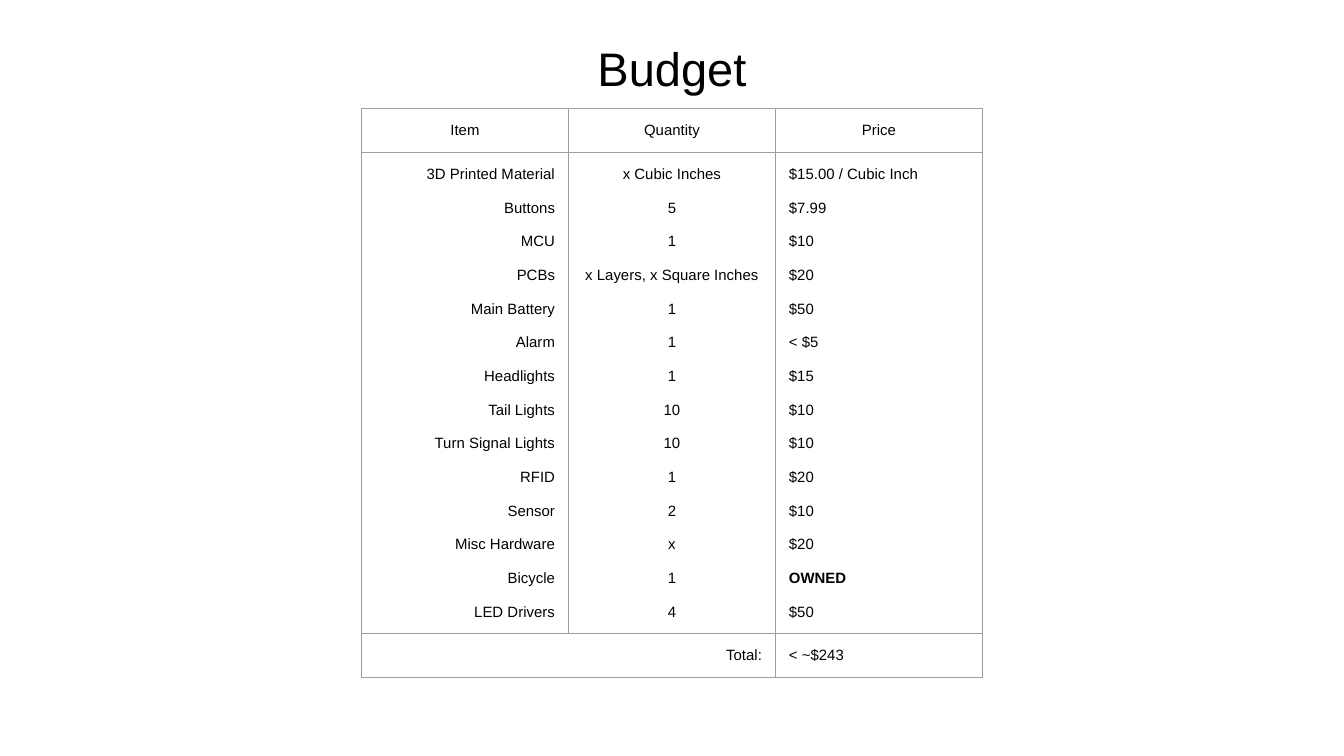
from lxml import etree
from pptx import Presentation
from pptx.dml.color import RGBColor
from pptx.enum.text import MSO_ANCHOR, PP_ALIGN
from pptx.oxml.ns import qn
from pptx.util import Inches, Pt

LEFT, CENTER, RIGHT = PP_ALIGN.LEFT, PP_ALIGN.CENTER, PP_ALIGN.RIGHT
TOP, MIDDLE = MSO_ANCHOR.TOP, MSO_ANCHOR.MIDDLE

BLACK = RGBColor(0x00, 0x00, 0x00)
GRAY = RGBColor(0x9E, 0x9E, 0x9E)

TITLE_ONLY = 5
SLIDE_WIDTH = Inches(10)
SLIDE_HEIGHT = SLIDE_WIDTH * 9 // 16
TABLE_LEFT, TABLE_TOP = 2.69, 0.81
COLUMN_WIDTH = 1.54
ROW_HEIGHTS = [0.32, 3.58, 0.32]

HEADINGS = ["Item", "Quantity", "Price"]
ALIGNMENTS = [RIGHT, CENTER, LEFT]
BUDGET = [
    ("3D Printed Material", "x Cubic Inches", "$15.00 / Cubic Inch"),
    ("Buttons", "5", "$7.99"),
    ("MCU", "1", "$10"),
    ("PCBs", "x Layers, x Square Inches", "$20"),
    ("Main Battery", "1", "$50"),
    ("Alarm", "1", "< $5"),
    ("Headlights", "1", "$15"),
    ("Tail Lights", "10", "$10"),
    ("Turn Signal Lights", "10", "$10"),
    ("RFID", "1", "$20"),
    ("Sensor", "2", "$10"),
    ("Misc Hardware", "x", "$20"),
    ("Bicycle", "1", "OWNED"),
    ("LED Drivers", "4", "$50"),
]
BOLD_TEXT = "OWNED"


def set_values(target, values):
    for name, value in values.items():
        setattr(target, name, value)


class BudgetSlide:
    title_font = {"name": "Arial", "size": Pt(25.2), "bold": False}
    cell_font = {"name": "Arial", "size": Pt(8)}
    margins = {f"margin_{side}": Inches(0.1)
               for side in ("left", "right", "top", "bottom")}
    line_gap = Pt(9)

    def __init__(self, deck):
        self.slide = deck.slides.add_slide(deck.slide_layouts[TITLE_ONLY])

    def title(self, text, left, top, width, height):
        box = self.slide.shapes.title
        set_values(box, {"left": Inches(left), "top": Inches(top),
                         "width": Inches(width), "height": Inches(height)})
        frame = box.text_frame
        set_values(frame, {**self.margins, "vertical_anchor": MIDDLE,
                           "word_wrap": True})
        para = frame.paragraphs[0]
        para.alignment = CENTER
        span = para.add_run()
        span.text = text
        set_values(span.font, self.title_font)
        span.font.color.rgb = BLACK

    def table(self, left, top, column_width, row_heights, columns):
        frame = self.slide.shapes.add_table(
            len(row_heights), columns, Inches(left), Inches(top),
            Inches(column_width * columns), Inches(sum(row_heights)))
        table = frame.table
        set_values(table, {"first_row": False, "horz_banding": False})
        for column in table.columns:
            column.width = Inches(column_width)
        for row, height in zip(table.rows, row_heights):
            row.height = Inches(height)
        for cell in table.iter_cells():
            self.borders(cell)
            cell.fill.background()
        return table

    def borders(self, cell):
        properties = cell._tc.get_or_add_tcPr()
        for side in ("lnL", "lnR", "lnT", "lnB"):
            line = etree.SubElement(properties, qn(f"a:{side}"), w=str(Pt(0.75)))
            fill = etree.SubElement(line, qn("a:solidFill"))
            etree.SubElement(fill, qn("a:srgbClr"), val=str(GRAY))

    def cell(self, cell, lines, alignment):
        set_values(cell, {**self.margins, "vertical_anchor": TOP})
        frame = cell.text_frame
        for index, text in enumerate(lines):
            para = frame.add_paragraph() if index else frame.paragraphs[0]
            para.alignment = alignment
            if index:
                para.space_before = self.line_gap
            span = para.add_run()
            span.text = text
            set_values(span.font, {**self.cell_font, "bold": text == BOLD_TEXT})
            span.font.color.rgb = BLACK


def main():
    deck = Presentation()
    set_values(deck, {"slide_width": SLIDE_WIDTH, "slide_height": SLIDE_HEIGHT})
    page = BudgetSlide(deck)

    # Title
    page.title("Budget", TABLE_LEFT, 0.19, 4.62, 0.63)

    # Header and item list, one cell per column
    table = page.table(TABLE_LEFT, TABLE_TOP, COLUMN_WIDTH, ROW_HEIGHTS,
                       len(HEADINGS))
    for column, (heading, lines) in enumerate(zip(HEADINGS, zip(*BUDGET))):
        page.cell(table.cell(0, column), [heading], CENTER)
        page.cell(table.cell(1, column), lines, ALIGNMENTS[column])

    # Total
    table.cell(2, 0).merge(table.cell(2, 1))
    page.cell(table.cell(2, 0), ["Total:"], RIGHT)
    page.cell(table.cell(2, 2), ["< ~$243"], LEFT)

    deck.save("out.pptx")


if __name__ == "__main__":
    main()
